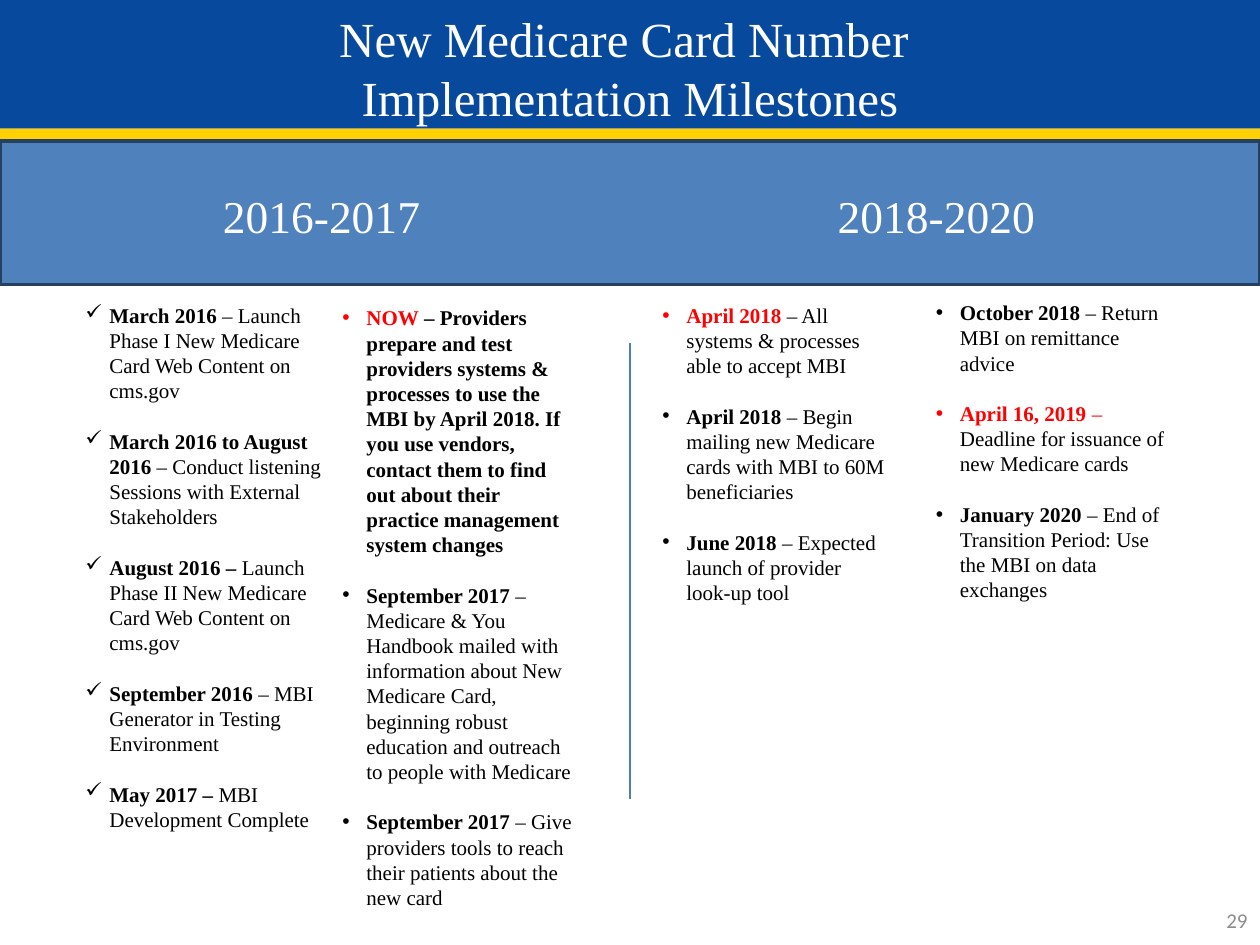
from pptx import Presentation
from pptx import util as u
from pptx.dml.color import RGBColor
from pptx.enum import shapes, text
from pptx.oxml.ns import qn
from lxml import etree

COLS, ROWS = 100, 75
HUE = {"navy": "07499C", "gold": "FFD004", "band": "4F81BD", "edge": "254061",
       "rule": "4B7EBC", "red": "FF0000", "ink": "000000", "white": "FFFFFF",
       "gray": "8C8C8C"}
SERIF = "Times New Roman"
LEAD = 1.2

prs = Presentation()
prs.slide_width, prs.slide_height = u.Inches(10), u.Inches(7.5)
slide = prs.slides.add_slide(prs.slide_layouts[6])


def rgb(name):
    return RGBColor.from_string(HUE[name])


def grid(box):
    x, y, w, h = box
    cell_w, cell_h = prs.slide_width / COLS, prs.slide_height / ROWS
    return [int(v) for v in (x * cell_w, y * cell_h, w * cell_w, h * cell_h)]


def bar(box, fill, line=None):
    rect = slide.shapes.add_shape(shapes.MSO_SHAPE.RECTANGLE, *grid(box))
    rect.shadow.inherit = False
    rect.fill.solid()
    rect.fill.fore_color.rgb = rgb(fill)
    if line:
        rect.line.color.rgb = rgb(line)
        rect.line.width = u.Pt(2)
    else:
        rect.line.fill.background()


def mark(para, sign, hue):
    props = para._p.get_or_add_pPr()
    props.set("marL", str(u.Inches(0.19)))
    props.set("indent", str(-u.Inches(0.19)))
    tint = etree.SubElement(props, qn("a:buClr"))
    etree.SubElement(tint, qn("a:srgbClr")).set("val", HUE[hue])
    if sign == "•":
        etree.SubElement(props, qn("a:buFont")).set("typeface", "Arial")
    etree.SubElement(props, qn("a:buChar")).set("char", sign)


def write(box, paras, size=12, font=SERIF, align="LEFT", anchor="TOP",
          inset=(0.1, 0.05, 0.1, 0.05), wrap=True, gap=0, sign=None):
    frame = slide.shapes.add_textbox(*grid(box)).text_frame
    frame.word_wrap = wrap
    frame.vertical_anchor = getattr(text.MSO_ANCHOR, anchor)
    (frame.margin_left, frame.margin_top,
     frame.margin_right, frame.margin_bottom) = map(u.Inches, inset)
    for i, runs in enumerate(paras):
        para = frame.add_paragraph() if i else frame.paragraphs[0]
        para.alignment = getattr(text.PP_ALIGN, align)
        para.line_spacing = u.Pt(size * LEAD)
        para.space_before = u.Pt(gap if i else 0)
        if sign:
            mark(para, sign, runs[0][1])
        for words, hue, bold in runs:
            run = para.add_run()
            run.text = words
            run.font.size, run.font.name, run.font.bold = u.Pt(size), font, bold
            run.font.color.rgb = rgb(hue)


def item(date, note, hue="ink", bold=False):
    return [(date, hue, True), (note, "ink", bold)]


def header(box):
    x, y, w, h = box
    bar((x, y, w, h * 0.92), "navy")
    bar((x, y + h * 0.92, w, h * 0.08), "gold")
    lines = ["New Medicare Card Number ", "Implementation Milestones"]
    write((x, y + 0.6, w, 9.4), [[(line, "white", False)] for line in lines],
          size=28, align="CENTER", anchor="BOTTOM", inset=(0, 0, 0, 0))


def years(box):
    x, y, w, h = box
    bar(box, "band", "edge")
    for left, label in ((16.7, "2016-2017"), (65.5, "2018-2020")):
        write((x + left, y + 3.2, 17.8, 5.4), [[(label, "white", False)]],
              size=26, wrap=False)


def column(box, items, top=0.23, sign="•"):
    write(box, items, inset=(0.1, top, 0.1, 0.05), gap=12 * LEAD, sign=sign)


def rule(x, top, end):
    ends = grid((x, top, x, end))
    line = slide.shapes.add_connector(shapes.MSO_CONNECTOR.STRAIGHT, *ends)
    line.line.color.rgb = rgb("rule")
    line.line.width = u.Pt(0.75)
    etree.SubElement(line._element.spPr, qn("a:effectLst"))


DONE = [
    item("March 2016 ", "– Launch Phase I New Medicare Card Web Content on cms.gov"),
    item("March 2016 to August 2016 ",
         "– Conduct listening Sessions with External Stakeholders"),
    item("August 2016 – ", "Launch Phase II New Medicare Card Web Content on cms.gov"),
    item("September 2016 ", "– MBI Generator in Testing Environment"),
    item("May 2017 – ", "MBI Development Complete"),
]
NOW = [
    item("NOW", " – Providers prepare and test providers systems & processes to use "
         "the MBI by April 2018. If you use vendors, contact them to find out about "
         "their practice management system changes", "red", True),
    item("September 2017 ", "– Medicare & You Handbook mailed with information about "
         "New Medicare Card, beginning robust education and outreach to people "
         "with Medicare"),
    item("September 2017 ",
         "– Give providers tools to reach their patients about the new card"),
]
NEXT = [
    item("April 2018 ", "– All systems & processes able to accept MBI", "red"),
    item("April 2018 ",
         "– Begin mailing new Medicare cards with MBI to 60M beneficiaries"),
    item("June 2018 ", "– Expected launch of provider look-up tool"),
]
LAST = [
    item("October 2018 ", "– Return MBI on remittance advice"),
    [("April 16, 2019 ", "red", True), ("– ", "red", False),
     ("Deadline for issuance of new Medicare cards", "ink", False)],
    item("January 2020 ",
         "– End of Transition Period: Use the MBI on data exchanges"),
]

header((0, 0, COLS, 11.1))
column((26.2, 21.7, 20.3, 51.5), NOW, top=0.25)
column((51.6, 21.7, 20, 39), NEXT)
rule(COLS / 2, 27.2, 63.4)
column((73.3, 23.3, 20.9, 25.2), LAST, top=0.05)
column((5.8, 21.7, 20.9, 49.1), DONE, sign="✓")
years((0, 11.2, COLS, 11.4))
write((76.7, 71, 23.3, 4), [[("29", "gray", False)]], font="Calibri",
      align="RIGHT", anchor="MIDDLE")

prs.save("out.pptx")
